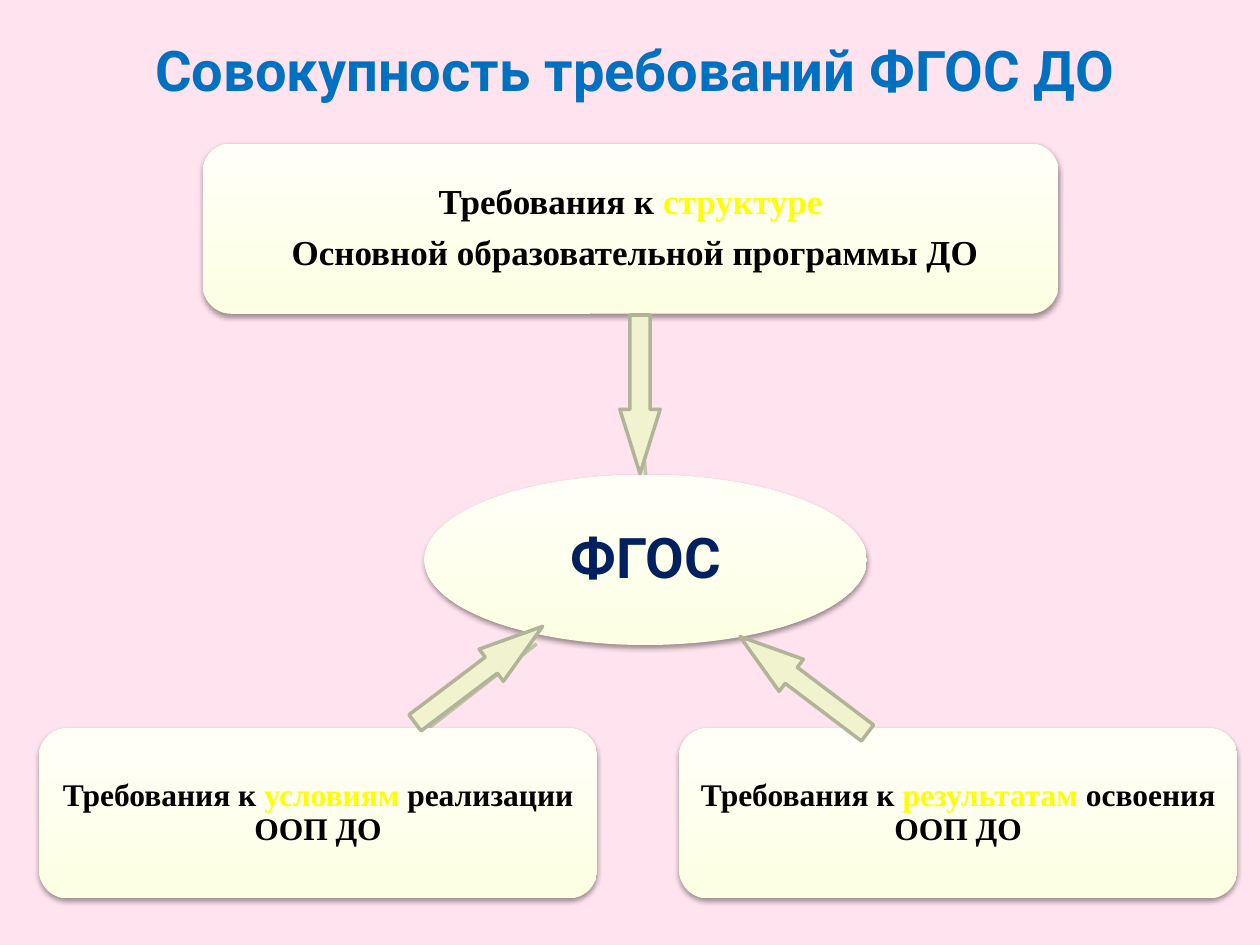
"""Build a slide showing the three groups of requirements that feed the ФГОС standard."""
from lxml import etree
from pptx import Presentation
from pptx import util as u
from pptx.dml.color import RGBColor
from pptx.enum import shapes, text
from pptx.oxml import parse_xml
from pptx.oxml.ns import nsdecls, qn

BLACK, YELLOW, NAVY, BLUE = "000000", "FFFF00", "002060", "0070C0"
SHADOW = (
    f'<a:effectLst {nsdecls("a")}><a:outerShdw blurRad="{u.Pt(3.1)}" dist="{u.Pt(1.6)}" '
    'dir="5400000" rotWithShape="0"><a:srgbClr val="000000"><a:alpha val="38000"/>'
    "</a:srgbClr></a:outerShdw></a:effectLst>"
)


def color(value):
    return RGBColor.from_string(value)


def write(paragraph, runs, size, font):
    paragraph.alignment = text.PP_ALIGN.CENTER
    for words, shade in runs:
        run = paragraph.add_run()
        run.text = words
        run.font.name = font
        run.font.size = u.Pt(size)
        run.font.bold = True
        run.font.color.rgb = color(shade)


presentation = Presentation()
presentation.slide_width, presentation.slide_height = u.Pt(720), u.Pt(540)
slide = presentation.slides.add_slide(presentation.slide_layouts[6])
slide.background.fill.solid()
slide.background.fill.fore_color.rgb = color("FFE3EE")

title = slide.shapes.add_textbox(u.Pt(39.6), u.Pt(16.6), u.Pt(646.6), u.Pt(46))
title.text_frame.word_wrap = False
write(title.text_frame.paragraphs[0], [("Совокупность требований ФГОС ДО", BLUE)], 32, "Roboto")

serif, oval, box = "Times New Roman", shapes.MSO_SHAPE.OVAL, shapes.MSO_SHAPE.ROUNDED_RECTANGLE
nodes = [
    (oval, 242.6, 271.4, 252.8, 32, "Roboto", [[("ФГОС", NAVY)]]),
    (box, 115.9, 82.1, 488.9, 20, serif, [
        [("Требования к ", BLACK), ("структуре", YELLOW)],
        [(" Основной образовательной программы ДО", BLACK)],
    ]),
    (box, 22.3, 416.2, 319, 18, serif, [
        [("Требования к ", BLACK), ("условиям ", YELLOW), ("реализации ООП ДО", BLACK)],
    ]),
    (box, 388.1, 416.2, 319, 18, serif, [
        [("Требования к ", BLACK), ("результатам ", YELLOW), ("освоения ООП ДО", BLACK)],
    ]),
]
drawn = []
for kind, left, top, width, size, font, lines in nodes:
    shape = slide.shapes.add_shape(kind, u.Pt(left), u.Pt(top), u.Pt(width), u.Pt(97.2))
    shape.fill.gradient()
    shape.fill.gradient_angle = 90
    for stop, (position, shade) in zip(shape.fill.gradient_stops, [(0, "FDFFE3"), (1, "FFFFF7")]):
        stop.position = position
        stop.color.rgb = color(shade)
    shape.line.fill.background()
    shape._element.spPr.append(parse_xml(SHADOW))
    frame = shape.text_frame
    frame.word_wrap = True
    frame.vertical_anchor = text.MSO_ANCHOR.MIDDLE
    frame.margin_left = frame.margin_right = frame.margin_top = frame.margin_bottom = u.Pt(4)
    for index, runs in enumerate(lines):
        paragraph = frame.add_paragraph() if index else frame.paragraphs[0]
        paragraph.line_spacing = 0.9
        if index < len(lines) - 1:
            paragraph.space_after = u.Pt(8)
        write(paragraph, runs, size, font)
    drawn.append(shape)

standard, structure = drawn[:2]
links = [(366.5, 271.4, 362.2, 179.3), (306.7, 367.9, 244.8, 416.2), (428.4, 368.6, 487.4, 416.2)]
connectors = []
for ends in links:
    connector = slide.shapes.add_connector(shapes.MSO_CONNECTOR.STRAIGHT, *map(u.Pt, ends))
    connector.line.color.rgb = color("C1C3A6")
    connector.line.width = u.Pt(2)
    etree.SubElement(connector._element.spPr, qn("a:effectLst"))
    standard._element.addnext(connector._element)
    connectors.append(connector)
connectors[0].begin_connect(standard, 0)
connectors[0].end_connect(structure, 2)

for left, top, height, rotation in [
    (262.1, 339.8, 91.4, 52.9),
    (447.8, 345.6, 91.4, 307.1),
    (354.2, 180, 90.7, 180),
]:
    arrow = slide.shapes.add_shape(
        shapes.MSO_SHAPE.UP_ARROW, u.Pt(left), u.Pt(top), u.Pt(23), u.Pt(height)
    )
    arrow.adjustments[0], arrow.adjustments[1] = 0.5, 1.6
    arrow.rotation = rotation
    arrow.shadow.inherit = False
    arrow.fill.solid()
    arrow.fill.fore_color.rgb = color("F1F3CF")
    arrow.line.color.rgb = color("B2B499")
    arrow.line.width = u.Pt(2)

presentation.save("out.pptx")
